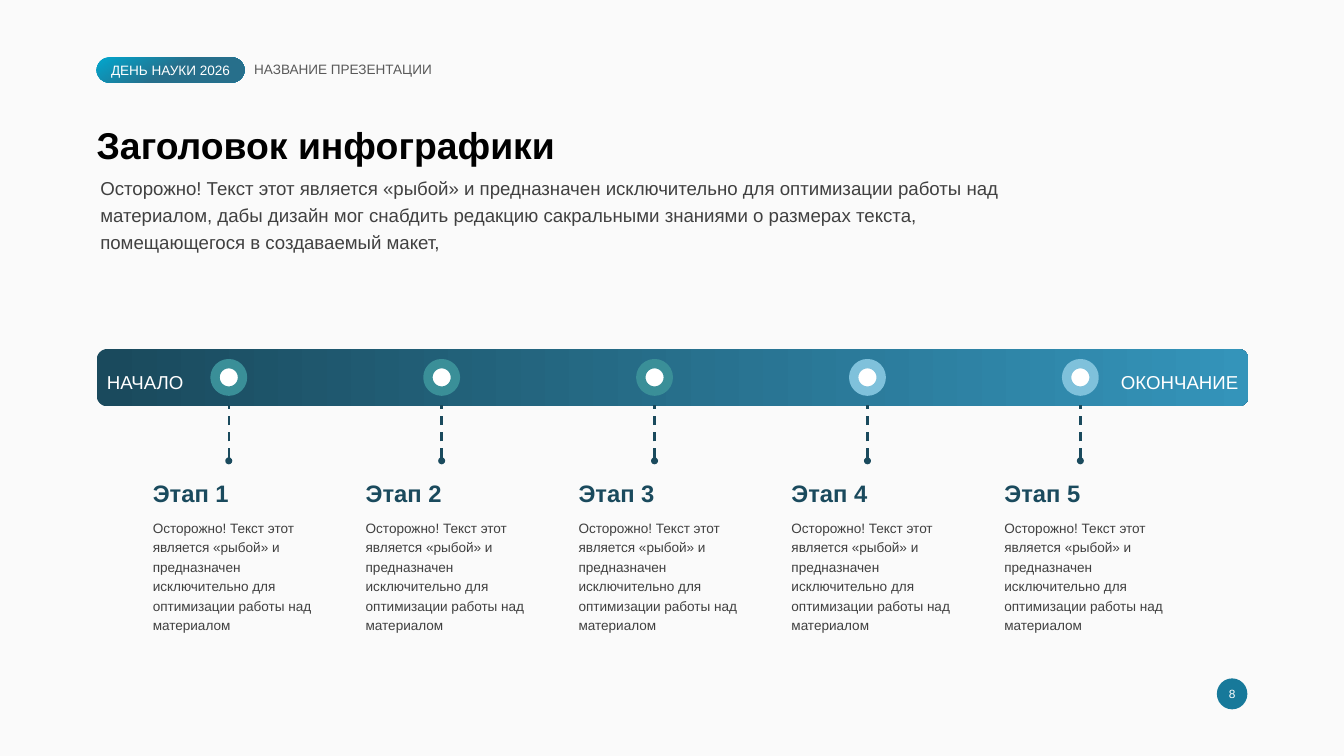
from pptx import Presentation
from pptx.dml.color import RGBColor
from pptx.enum.dml import MSO_LINE
from pptx.enum.shapes import MSO_CONNECTOR, MSO_SHAPE
from pptx.enum.text import MSO_ANCHOR, PP_ALIGN
from pptx.oxml.ns import qn
from pptx.util import Pt
from lxml import etree

LEFT, CENTER, RIGHT = PP_ALIGN.LEFT, PP_ALIGN.CENTER, PP_ALIGN.RIGHT
TOP, MIDDLE = MSO_ANCHOR.TOP, MSO_ANCHOR.MIDDLE
ROUNDED, OVAL = MSO_SHAPE.ROUNDED_RECTANGLE, MSO_SHAPE.OVAL
STRAIGHT, DASH = MSO_CONNECTOR.STRAIGHT, MSO_LINE.DASH

PAPER = RGBColor(0xFA, 0xFA, 0xFA)
WHITE = RGBColor(0xFF, 0xFF, 0xFF)
BLACK = RGBColor(0x00, 0x00, 0x00)
GRAY = RGBColor(0x59, 0x59, 0x59)
DARK_GRAY = RGBColor(0x40, 0x40, 0x40)
NAVY = RGBColor(0x1A, 0x4A, 0x5D)
BLUE = RGBColor(0x34, 0x94, 0xBA)
CYAN = RGBColor(0x01, 0xA7, 0xCE)
STEEL = RGBColor(0x27, 0x6F, 0x8B)
PAGE_BLUE = RGBColor(0x17, 0x79, 0x9A)
GREEN = RGBColor(0x3A, 0x8F, 0x98)
SKY = RGBColor(0x7F, 0xC1, 0xDB)

FONT = "Arial"
MARGIN = 113.8
INSET = 4.3

prs = Presentation()
prs.slide_width, prs.slide_height = Pt(1583.28), Pt(890.64)
s = prs.slides.add_slide(prs.slide_layouts[6])
s.background.fill.solid()
s.background.fill.fore_color.rgb = PAPER


def write(sp, text, size, color, bold=False, align=LEFT, anchor=TOP,
          spacing=1.0, inset=(0, 0)):
    tf = sp.text_frame
    tf.word_wrap = True
    tf.vertical_anchor = anchor
    tf.margin_left = tf.margin_right = Pt(inset[0])
    tf.margin_top = tf.margin_bottom = Pt(inset[1])
    p = tf.paragraphs[0]
    p.alignment = align
    p.line_spacing = spacing
    r = p.add_run()
    r.text = text
    r.font.name, r.font.size, r.font.bold = FONT, Pt(size), bold
    r.font.color.rgb = color


def add_shape(kind, x, y, w, h, fill, angle=0):
    """Fill is one colour, or a list of (position, colour) gradient stops."""
    sp = s.shapes.add_shape(kind, Pt(x), Pt(y), Pt(w), Pt(h))
    sp.shadow.inherit = False
    sp.line.fill.background()
    if isinstance(fill, list):
        sp.fill.gradient()
        sp.fill.gradient_angle = angle
        for stop, (position, color) in zip(sp.fill.gradient_stops, fill):
            stop.position = position
            stop.color.rgb = color
    else:
        sp.fill.solid()
        sp.fill.fore_color.rgb = fill
    return sp


# Header: event badge, presentation name, page number
badge = add_shape(ROUNDED, MARGIN, 67.7, 174.2, 29.5,
                  [(0, CYAN), (0.51, STEEL)], 300)
badge.adjustments[0] = 0.5
write(badge, "ДЕНЬ НАУКИ 2026", 16, WHITE, align=CENTER, anchor=MIDDLE)

name = s.shapes.add_textbox(Pt(299.5), Pt(74.2), Pt(257.8), Pt(17.3))
write(name, "НАЗВАНИЕ ПРЕЗЕНТАЦИИ", 16, GRAY, spacing=0.9)

page = add_shape(OVAL, 1433.5, 799.2, 36, 36.5, PAGE_BLUE)
write(page, "8", 14, WHITE, align=CENTER, anchor=MIDDLE)

# Title and introduction
title = s.shapes.add_textbox(Pt(MARGIN), Pt(150.5), Pt(1074.2), Pt(48.2))
write(title, "Заголовок инфографики", 44, BLACK, bold=True, spacing=0.9)

intro = s.shapes.add_textbox(Pt(MARGIN), Pt(198.7), Pt(1074.2), Pt(100.8))
write(intro, "Осторожно! Текст этот является «рыбой» и предназначен исключительно "
      "для оптимизации работы над материалом, дабы дизайн мог снабдить редакцию "
      "сакральными знаниями о размерах текста, помещающегося в создаваемый макет,",
      22, DARK_GRAY, spacing=1.2, inset=(INSET, INSET))

# Timeline bar with its end labels
bar = add_shape(ROUNDED, MARGIN, 411.1, 1357.2, 67.7, [(0.01, NAVY), (1, BLUE)])
bar.adjustments[0] = 0.189
for text, x, w, align in [("НАЧАЛО", 126, 131, LEFT),
                          ("ОКОНЧАНИЕ", 1279.4, 179.3, RIGHT)]:
    label = s.shapes.add_textbox(Pt(x), Pt(427), Pt(w), Pt(37.4))
    write(label, text, 22, WHITE, align=align, spacing=1.2, inset=(0, INSET))

# Stages: heading, description, dashed pointer, marker
FIRST_CENTER, STAGE_STEP = 269.5, 250.8
TEXT_OFFSET = 93.8
MARKER = 32.4
for i, ring in enumerate([GREEN, GREEN, GREEN, SKY, SKY]):
    center = FIRST_CENTER + i * STAGE_STEP
    x = center - TEXT_OFFSET

    heading = s.shapes.add_textbox(Pt(x), Pt(559.4), Pt(188.6), Pt(41.8))
    write(heading, f"Этап {i + 1}", 28, NAVY, bold=True, inset=(INSET, INSET))

    description = s.shapes.add_textbox(Pt(x), Pt(604.1), Pt(196.6), Pt(145.4))
    write(description, "Осторожно! Текст этот является «рыбой» и предназначен "
          "исключительно для оптимизации работы над материалом",
          16, DARK_GRAY, spacing=1.2, inset=(INSET, INSET))

    pointer = s.shapes.add_connector(STRAIGHT, Pt(center), Pt(542.9),
                                     Pt(center), Pt(477.4))
    pointer.line.color.rgb = NAVY
    pointer.line.width = Pt(2.75)
    pointer.line.dash_style = DASH
    etree.SubElement(pointer.line._get_or_add_ln(), qn("a:headEnd"), type="oval")
    etree.SubElement(pointer._element.spPr, qn("a:effectLst"))

    marker = add_shape(OVAL, center - MARKER / 2, 428.4, MARKER, MARKER, WHITE)
    marker.line.color.rgb = ring
    marker.line.width = Pt(11)

prs.save("out.pptx")
